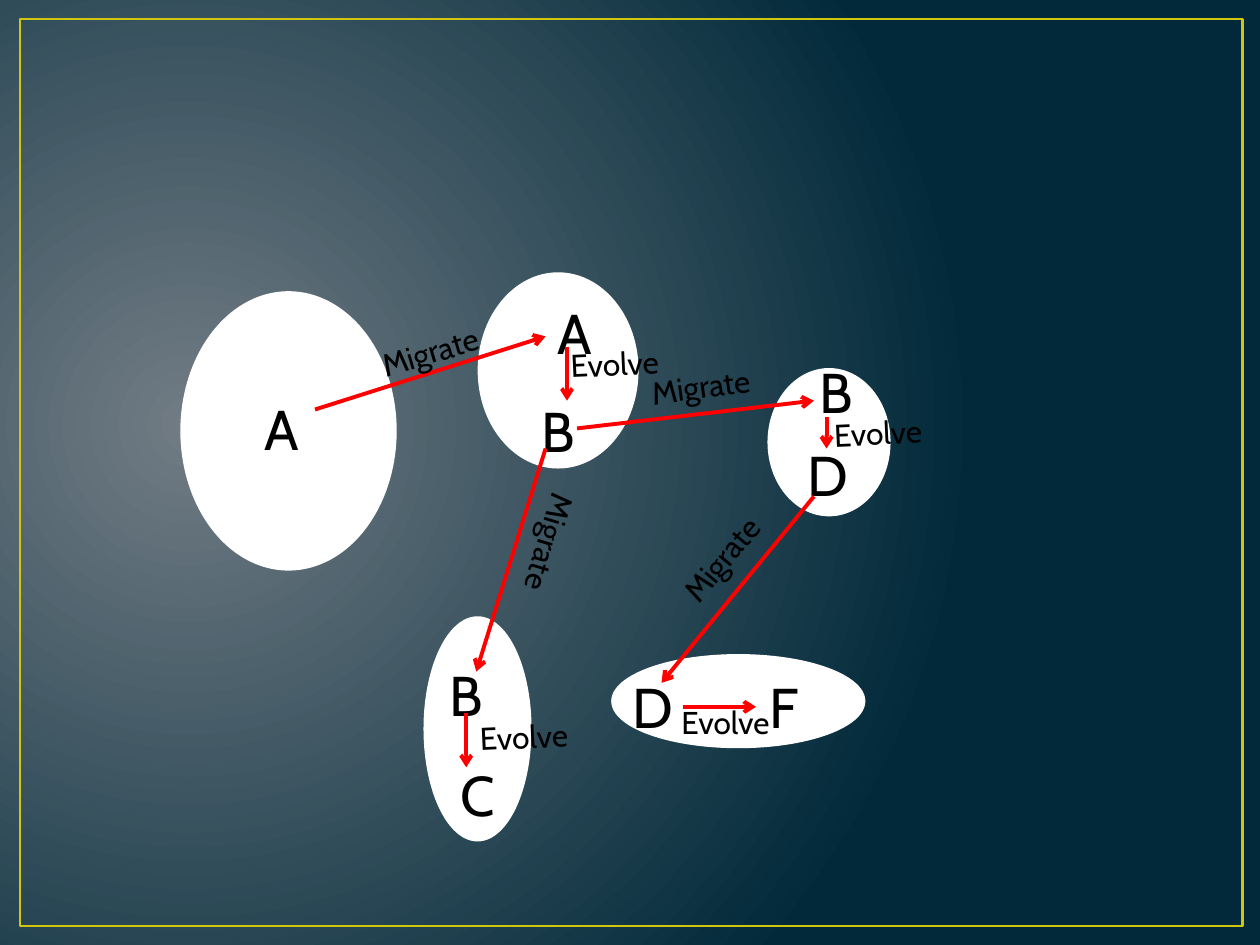
from lxml import etree
from pptx import Presentation
from pptx.dml.color import RGBColor
from pptx.enum.shapes import MSO_CONNECTOR, MSO_SHAPE
from pptx.enum.text import MSO_AUTO_SIZE
from pptx.oxml.ns import qn
from pptx.util import Inches, Pt

LINE = MSO_CONNECTOR.STRAIGHT
OVAL = MSO_SHAPE.OVAL
RECT = MSO_SHAPE.RECTANGLE
GROW = MSO_AUTO_SIZE.SHAPE_TO_FIT_TEXT


def paint(color, value):
    color.rgb = RGBColor.from_string(value)


def write(text, left, top, width, height, size, turn=0):
    box = slide.shapes.add_textbox(
        Inches(left), Inches(top), Inches(width), Inches(height))
    box.rotation = turn
    frame = box.text_frame
    frame.word_wrap = True
    frame.auto_size = GROW
    frame.text = text
    font = frame.paragraphs[0].runs[0].font
    font.name = "Cabin"
    font.size = Pt(size)
    paint(font.color, "000000")


deck = Presentation()
deck.slide_width = Inches(10)
deck.slide_height = Inches(7.5)
slide = deck.slides.add_slide(deck.slide_layouts[6])

# Radial background, centred near the left edge
back = slide.background.fill
back.gradient()
for stop, place, color in zip(back.gradient_stops, (0, 1), ("717C84", "01293A")):
    stop.position = place
    paint(stop.color, color)
grad = slide.element.find(".//" + qn("a:gradFill"))
grad.remove(grad.find(qn("a:lin")))
glow = etree.SubElement(grad, qn("a:path"), path="circle")
etree.SubElement(glow, qn("a:fillToRect"), l="15000", t="50000", r="85000", b="60000")

# Yellow frame
frame = slide.shapes.add_shape(
    RECT, Inches(0.16), Inches(0.15), Inches(9.7), Inches(7.2))
frame.shadow.inherit = False
frame.fill.background()
paint(frame.line.color, "CFC60D")
frame.line.width = Pt(1.5)

# Islands: left, top, width, height
islands = [
    (1.44, 2.32, 1.7, 2.2),
    (3.8, 2.17, 1.26, 1.54),
    (3.37, 4.9, 0.84, 1.77),
    (6.1, 2.93, 0.96, 1.16),
    (4.86, 5.2, 2, 0.73),
]
for spot in islands:
    isle = slide.shapes.add_shape(OVAL, *map(Inches, spot))
    isle.shadow.inherit = False
    isle.fill.solid()
    paint(isle.fill.fore_color, "FFFFFF")
    paint(isle.line.color, "FFFFFF")
    isle.line.width = Pt(1.25)

# Species: letter, left, top
species = [
    ("A", 2, 3.08),
    ("A", 4.33, 2.32),
    ("B", 4.2, 3.1),
    ("B", 3.47, 5.19),
    ("B", 6.41, 2.79),
    ("C", 3.56, 5.99),
    ("D", 6.31, 3.45),
    ("D", 4.92, 5.29),
    ("F", 6.01, 5.29),
]
for name, left, top in species:
    write(name, left, top, 0.5, 0.64, 32)

# Arrows: start x, start y, end x, end y
arrows = [
    (2.5, 3.25, 4.33, 2.67),
    (4.5, 2.75, 4.5, 3.18),
    (4.33, 3.56, 3.78, 5.33),
    (4.58, 3.4, 6.46, 3.18),
    (3.7, 5.66, 3.7, 6.09),
    (6.56, 3.31, 6.56, 3.56),
    (6.46, 3.94, 5.25, 5.42),
    (5.42, 5.61, 6, 5.61),
]
for ends in arrows:
    arrow = slide.shapes.add_connector(LINE, *map(Inches, ends))
    paint(arrow.line.color, "FF0000")
    arrow.line.width = Pt(2.25)
    etree.SubElement(arrow.line._get_or_add_ln(), qn("a:tailEnd"), type="arrow")
    etree.SubElement(arrow.element.spPr, qn("a:effectLst"))

# Arrow labels: text, left, top, rotation
labels = [
    ("Migrate", 2.92, 2.58, 343.5),
    ("Migrate", 5.07, 2.86, 352.2),
    ("Migrate", 3.83, 4.14, 106.8),
    ("Migrate", 5.22, 4.21, 309.7),
    ("Evolve", 4.43, 2.68, 357.3),
    ("Evolve", 6.52, 3.23, 357.3),
    ("Evolve", 3.71, 5.64, 357.3),
    ("Evolve", 5.31, 5.53, 0),
]
for text, left, top, turn in labels:
    write(text, left, top, 1.05, 0.4, 18, turn)

deck.save("out.pptx")
